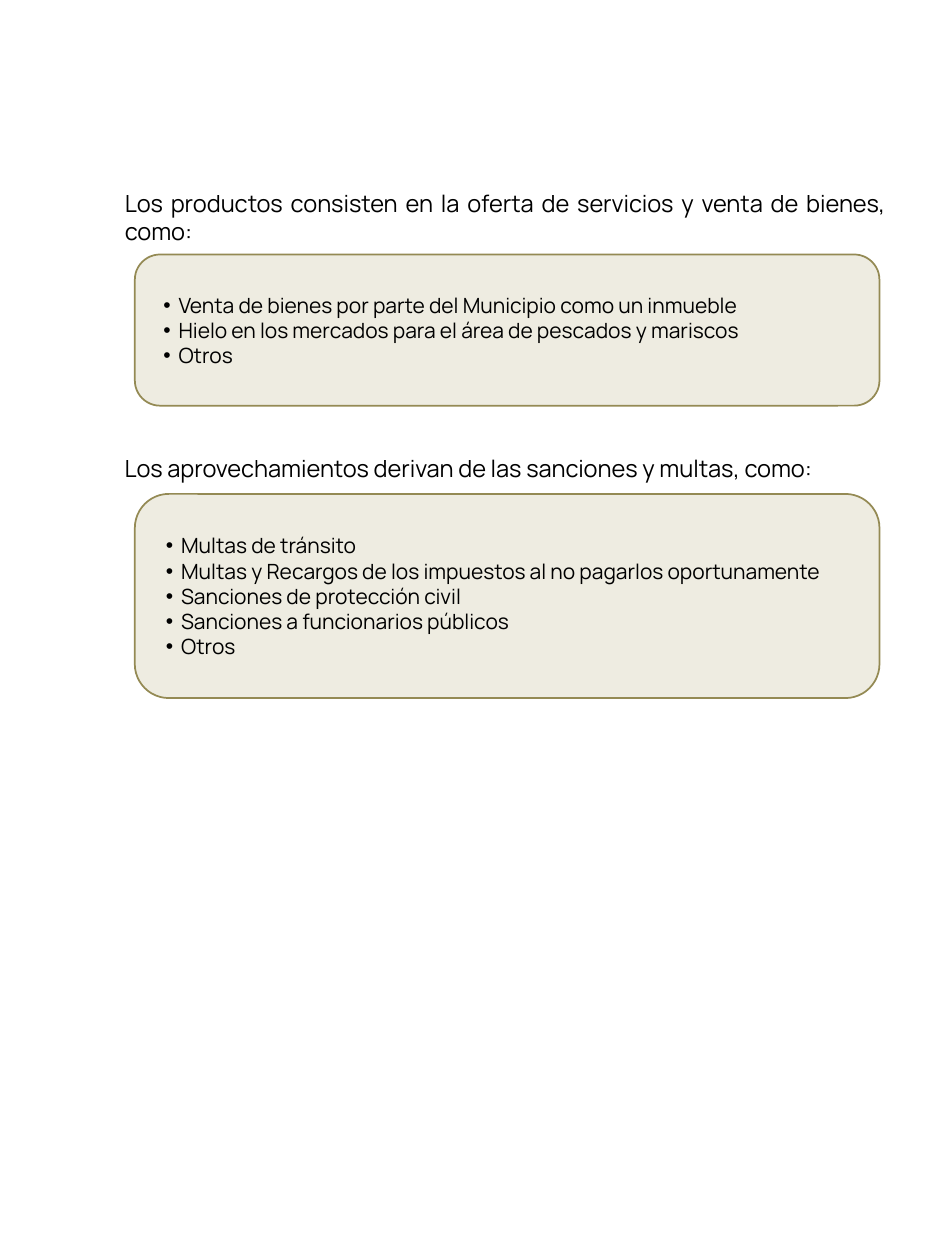
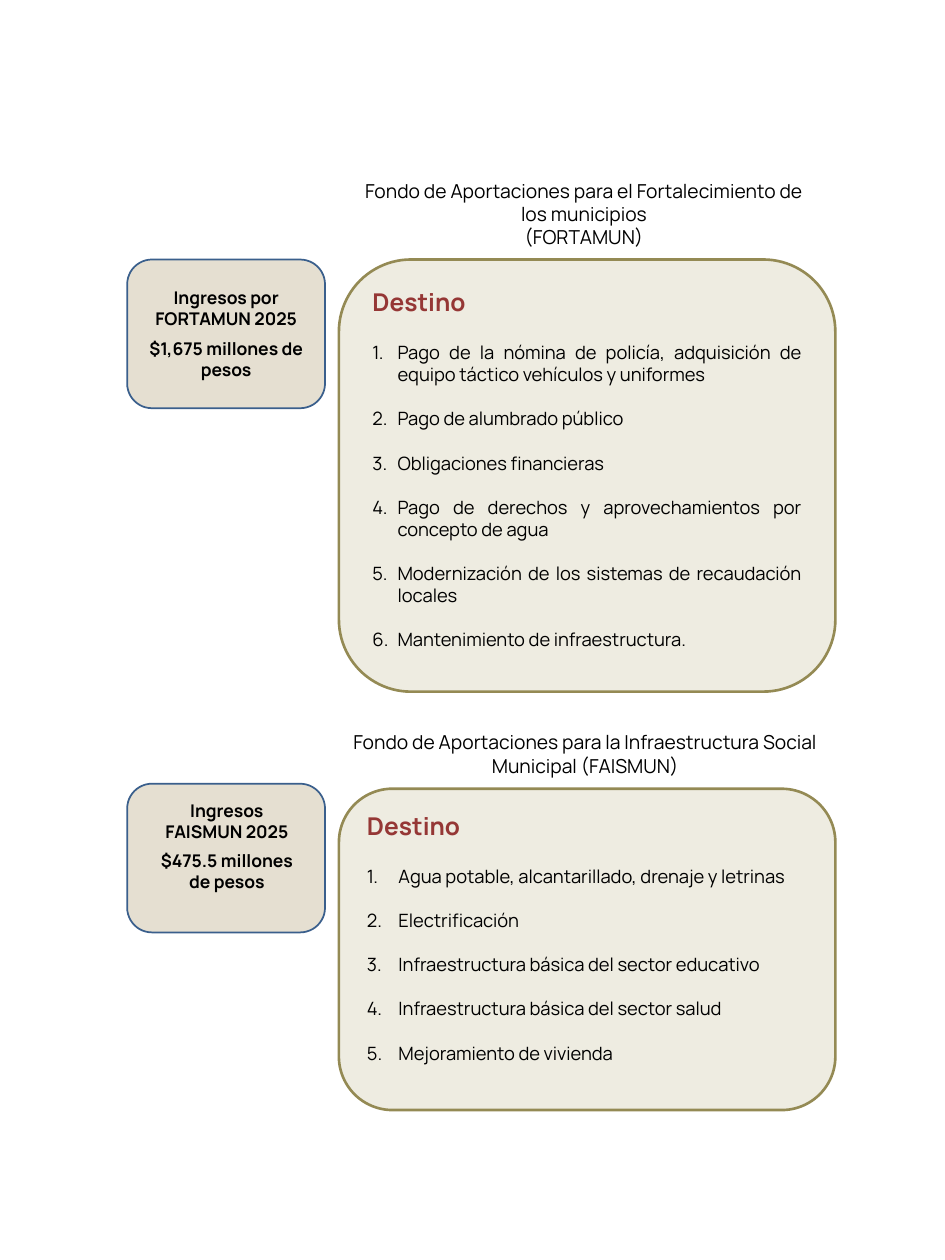
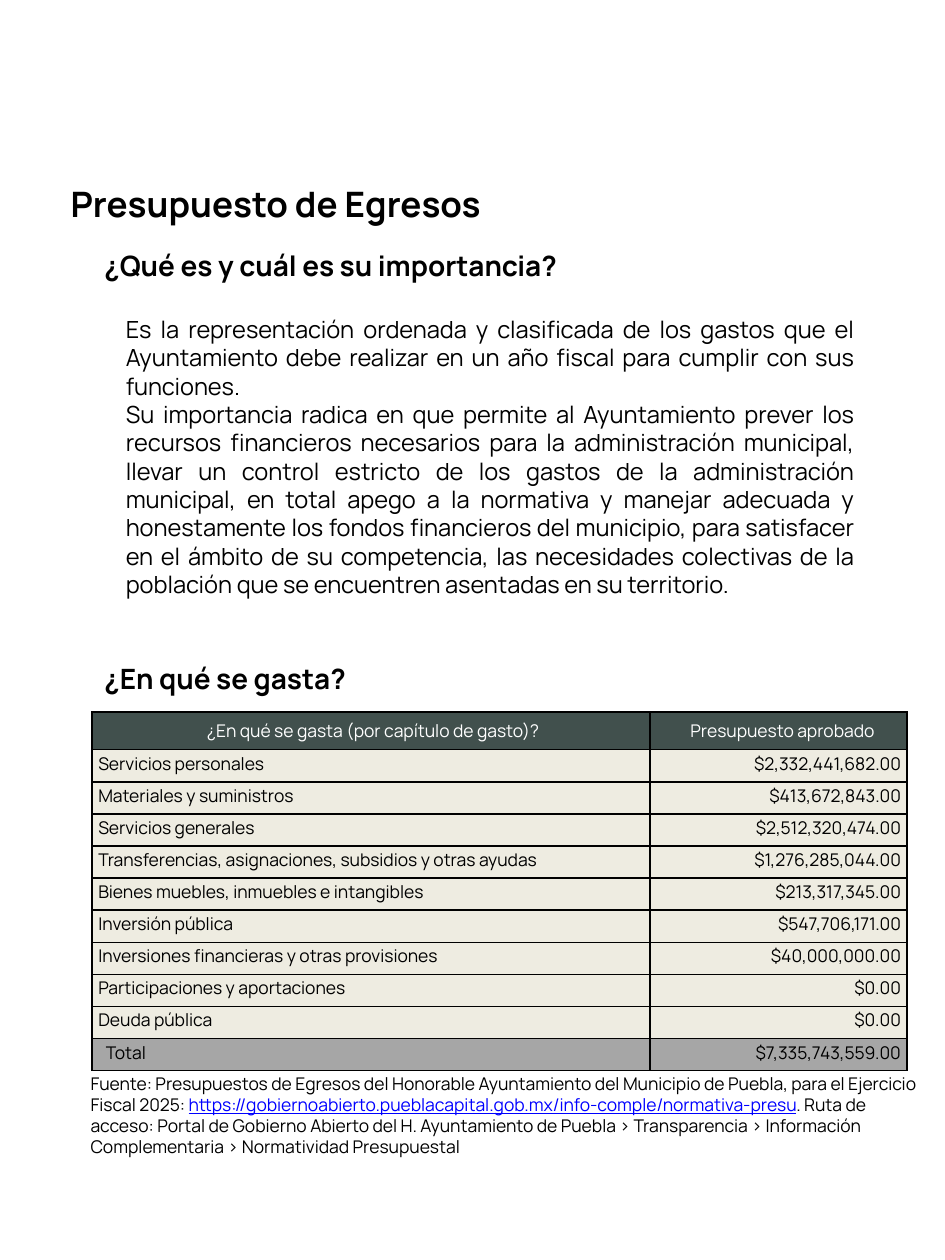
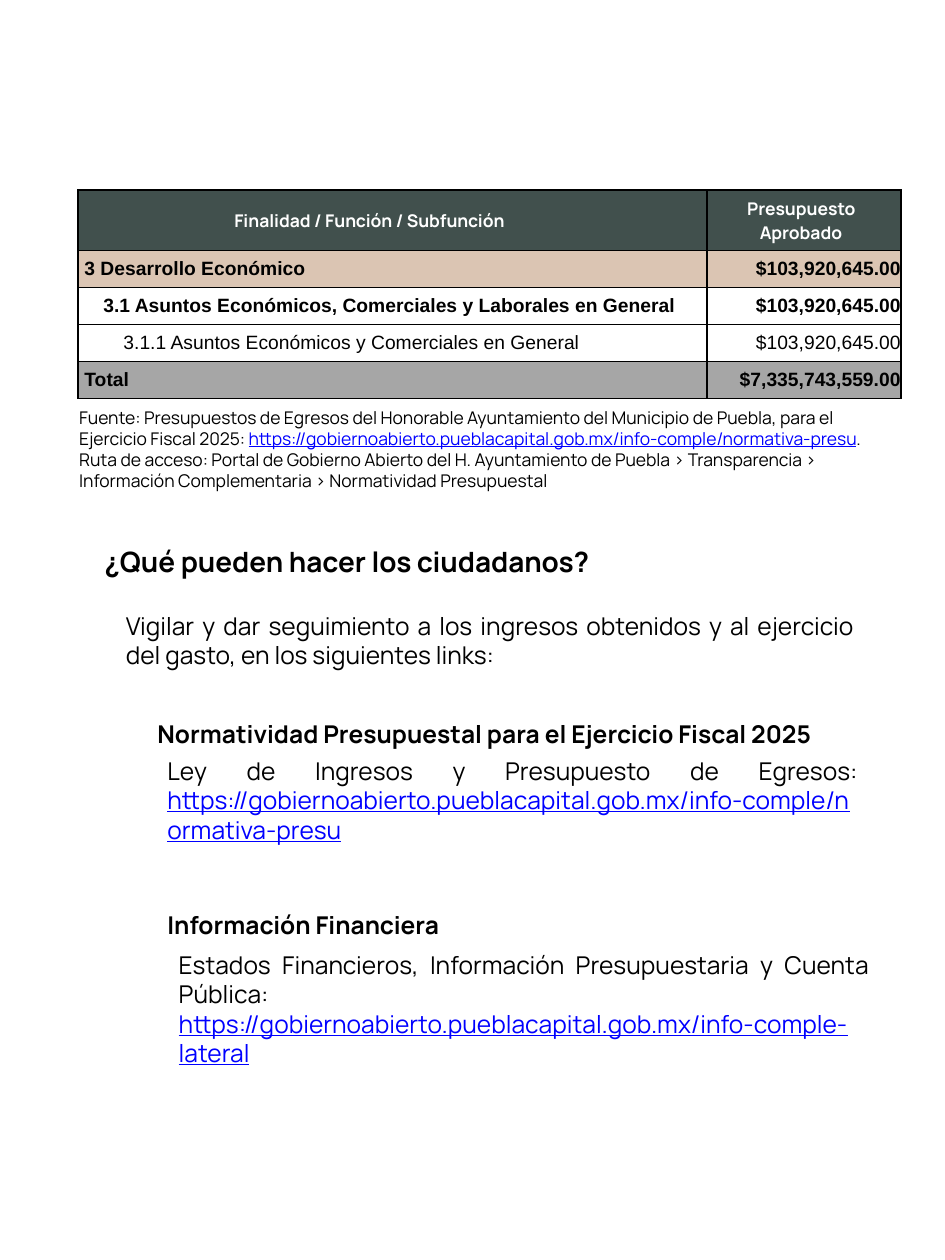
import dataclasses
import lxml.etree
import pptx
import pptx.dml.color
import pptx.enum.shapes
import pptx.enum.text
import pptx.oxml
import pptx.oxml.ns
import pptx.util


@dataclasses.dataclass(frozen=True)
class Theme:
    sans: str = "Manrope"
    table_sans: str = "Arial"
    ink: str = "000000"
    white: str = "FFFFFF"
    link: str = "0000FF"
    accent: str = "953735"
    panel: str = "EEECE1"
    panel_line: str = "948A54"
    income: str = "E5DFD1"
    income_line: str = "3A5F8C"
    header: str = "41504D"
    category: str = "DBC5B3"
    total: str = "A6A6A6"
    title: float = 20
    heading: float = 16
    subheading: float = 14
    body: float = 13.5
    bullet: float = 12
    fund: float = 11
    numbered: float = 10.5
    small: float = 10


theme = Theme()
rgb = pptx.dml.color.RGBColor.from_string
point = pptx.util.Pt
Align = pptx.enum.text.PP_ALIGN
Anchor = pptx.enum.text.MSO_ANCHOR
rounded = pptx.enum.shapes.MSO_SHAPE.ROUNDED_RECTANGLE

deck = pptx.Presentation()
deck.slide_width = pptx.util.Inches(7.5)
deck.slide_height = pptx.util.Inches(10)
column_unit = deck.slide_width / 75
row_unit = deck.slide_height / 100

layout = deck.slide_layouts.get_by_name("Title Only")
title_frame = layout.placeholders[0].text_frame
title_frame.vertical_anchor = Anchor.TOP
title_frame.auto_size = pptx.enum.text.MSO_AUTO_SIZE.NONE


def spot(column, row, columns, rows):
    return (round(column * column_unit), round(row * row_unit),
            round(columns * column_unit), round(rows * row_unit))


def write(frame, lines, size, color=theme.ink, bold=False, align=Align.LEFT,
          font=theme.sans, gap=0, spacing=None, indent=(0, 0), bullet=None):
    frame.word_wrap = True
    for line in lines:
        started = bool(frame.text)
        para = frame.add_paragraph() if started else frame.paragraphs[0]
        para.alignment = align
        if started and gap:
            para.space_before = point(gap)
        if spacing:
            para.line_spacing = point(spacing)
        properties = para._p.get_or_add_pPr()
        properties.set("marL", str(round(indent[0] * column_unit)))
        properties.set("indent", str(round(indent[1] * column_unit)))
        if bullet == "dot":
            mark = lxml.etree.SubElement(properties, pptx.oxml.ns.qn("a:buFont"))
            mark.set("typeface", theme.table_sans)
            mark = lxml.etree.SubElement(properties, pptx.oxml.ns.qn("a:buChar"))
            mark.set("char", "•")
        elif bullet == "number":
            mark = lxml.etree.SubElement(properties, pptx.oxml.ns.qn("a:buAutoNum"))
            mark.set("type", "arabicPeriod")
        for text, span_color in [(line, color)] if isinstance(line, str) else line:
            span = para.add_run()
            span.text = text
            span.font.name = font
            span.font.size = point(size)
            span.font.bold = bold
            span.font.underline = span_color == theme.link
            span.font.color.rgb = rgb(span_color)


income_page, funds_page, spending_page, citizens_page = [
    deck.slides.add_slide(layout) for _ in range(4)]

sections = [
    ("Los productos consisten en la oferta de servicios y venta de bienes, como:",
     (8.9, 14.5, 62.4, 5.7), (10.7, 20.2, 59.1, 12),
     ["Venta de bienes por parte del Municipio como un inmueble",
      "Hielo en los mercados para el área de pescados y mariscos",
      "Otros"]),
    ("Los aprovechamientos derivan de las sanciones y multas, como:",
     (8.9, 35.5, 66, 3.4), (10.7, 39.2, 59.1, 16.2),
     ["Multas de tránsito",
      "Multas y Recargos de los impuestos al no pagarlos oportunamente",
      "Sanciones de protección civil",
      "Sanciones a funcionarios públicos",
      "Otros"]),
]
for number, (lead, lead_spot, panel_spot, items) in enumerate(sections):
    panel = income_page.shapes.add_shape(rounded, *spot(*panel_spot))
    panel.shadow.inherit = False
    panel.fill.solid()
    panel.fill.fore_color.rgb = rgb(theme.panel)
    panel.line.color.rgb = rgb(theme.panel_line)
    panel.line.width = point(1)
    write(panel.text_frame, items, theme.bullet, indent=(1.9, -1.2), bullet="dot")
    box = income_page.shapes.add_textbox(0, 0, 0, 0) if number else income_page.shapes.title
    box.left, box.top, box.width, box.height = spot(*lead_spot)
    write(box.text_frame, [lead], theme.body, align=Align.JUSTIFY)

funds = [
    (["Fondo de Aportaciones para el Fortalecimiento de los municipios", "(FORTAMUN)"],
     (26.9, 13.7, 38.9, 6.6), (26.9, 20.6, 39.4, 34.3),
     (10.1, 20.6, 15.7, 11.8), (10.1, 22.3, 15.7, 8.4),
     ["Ingresos por FORTAMUN 2025", "$1,675 millones de pesos"],
     Align.JUSTIFY, 2,
     ["Pago de la nómina de policía, adquisición de equipo táctico vehículos y uniformes",
      "Pago de alumbrado público",
      "Obligaciones financieras",
      "Pago de derechos y aprovechamientos por concepto de agua",
      "Modernización de los sistemas de recaudación locales",
      "Mantenimiento de infraestructura."]),
    (["Fondo de Aportaciones para la Infraestructura Social Municipal (FAISMUN)"],
     (27, 57.5, 38.9, 4.7), (26.9, 62.6, 39.4, 25.5),
     (10.1, 62.2, 15.7, 11.8), (11.5, 63, 13, 10.1),
     ["Ingresos FAISMUN 2025", "$475.5 millones de pesos"],
     Align.LEFT, 2.5,
     ["Agua potable, alcantarillado, drenaje y letrinas",
      "Electrificación",
      "Infraestructura básica del sector educativo",
      "Infraestructura básica del sector salud",
      "Mejoramiento de vivienda"]),
]
for number, (name, name_spot, panel_spot, income_spot, amount_spot,
             amount, align, hang, uses) in enumerate(funds):
    group = funds_page.shapes.add_group_shape()
    income = group.shapes.add_shape(rounded, *spot(*income_spot))
    panel = funds_page.shapes.add_shape(rounded, *spot(*panel_spot))
    for shape, fill, line, width in [
            (income, theme.income, theme.income_line, 1),
            (panel, theme.panel, theme.panel_line, 1.5)]:
        shape.shadow.inherit = False
        shape.fill.solid()
        shape.fill.fore_color.rgb = rgb(fill)
        shape.line.color.rgb = rgb(line)
        shape.line.width = point(width)
    box = group.shapes.add_textbox(*spot(*amount_spot))
    write(box.text_frame, amount, theme.small, bold=True, align=Align.CENTER, gap=4.8)
    panel.text_frame.vertical_anchor = Anchor.TOP
    write(panel.text_frame, ["Destino"], theme.subheading, theme.accent, True, align)
    panel.text_frame.paragraphs[0].space_after = point(1.8)
    write(panel.text_frame, uses, theme.numbered, align=align, gap=12.6,
          indent=(hang, -hang), bullet="number")
    box = funds_page.shapes.add_textbox(0, 0, 0, 0) if number else funds_page.shapes.title
    box.left, box.top, box.width, box.height = spot(*name_spot)
    write(box.text_frame, name, theme.fund, align=Align.CENTER)

source = [[
    ("Fuente: Presupuestos de Egresos del Honorable Ayuntamiento del Municipio de Puebla, "
     "para el Ejercicio Fiscal 2025: ", theme.ink),
    ("https://gobiernoabierto.pueblacapital.gob.mx/info-comple/normativa-presu", theme.link),
    (". Ruta de acceso: Portal de Gobierno Abierto del H. Ayuntamiento de Puebla > "
     "Transparencia > Información Complementaria > Normatividad Presupuestal", theme.ink),
]]
for page, title, title_spot, size in [
        (spending_page, "Presupuesto de Egresos", (4.6, 14, 61.5, 4.4), theme.title),
        (citizens_page, "¿Qué pueden hacer los ciudadanos?", (7.3, 42.7, 61.5, 3.7),
         theme.heading)]:
    box = page.shapes.title
    box.left, box.top, box.width, box.height = spot(*title_spot)
    write(box.text_frame, [title], size, bold=True)

passages = [
    (spending_page, (7.3, 19.2, 61.5, 3.7), theme.heading, True, Align.LEFT,
     ["¿Qué es y cuál es su importancia?"]),
    (spending_page, (9, 24.5, 59.8, 26), theme.body, False, Align.JUSTIFY,
     ["Es la representación ordenada y clasificada de los gastos que el Ayuntamiento debe "
      "realizar en un año fiscal para cumplir con sus funciones.",
      "Su importancia radica en que permite al Ayuntamiento prever los recursos financieros "
      "necesarios para la administración municipal, llevar un control estricto de los gastos "
      "de la administración municipal, en total apego a la normativa y manejar adecuada y "
      "honestamente los fondos financieros del municipio, para satisfacer en el ámbito de su "
      "competencia, las necesidades colectivas de la población que se encuentren asentadas "
      "en su territorio."]),
    (spending_page, (7.3, 52, 61.5, 3.7), theme.heading, True, Align.LEFT,
     ["¿En qué se gasta?"]),
    (spending_page, (6.2, 84.7, 68.8, 7.7), theme.small, False, Align.LEFT, source),
    (citizens_page, (5.3, 31.8, 66.2, 7.7), theme.small, False, Align.LEFT, source),
    (citizens_page, (9, 48, 59.8, 5.7), theme.subheading, False, Align.JUSTIFY,
     ["Vigilar y dar seguimiento a los ingresos obtenidos y al ejercicio del gasto, "
      "en los siguientes links:"]),
    (citizens_page, (11.5, 56.6, 61.5, 3.4), theme.subheading, True, Align.LEFT,
     ["Normatividad Presupuestal para el Ejercicio Fiscal 2025"]),
    (citizens_page, (12.3, 59.5, 56.8, 8.1), theme.subheading, False, Align.JUSTIFY,
     [[("Ley de Ingresos y Presupuesto de Egresos: ", theme.ink),
       ("https://gobiernoabierto.pueblacapital.gob.mx/info-comple/normativa-presu",
        theme.link)]]),
    (citizens_page, (12.3, 71.7, 61.5, 3.4), theme.subheading, True, Align.LEFT,
     ["Información Financiera"]),
    (citizens_page, (13.2, 74.9, 56.8, 10.4), theme.subheading, False, Align.JUSTIFY,
     ["Estados Financieros, Información Presupuestaria y Cuenta Pública:",
      [("https://gobiernoabierto.pueblacapital.gob.mx/info-comple-lateral", theme.link)]]),
]
for page, place, size, bold, align, lines in passages:
    box = page.shapes.add_textbox(*spot(*place))
    write(box.text_frame, lines, size, bold=bold, align=align)

chapters = [
    ("Servicios personales", "$2,332,441,682.00"),
    ("Materiales y suministros", "$413,672,843.00"),
    ("Servicios generales", "$2,512,320,474.00"),
    ("Transferencias, asignaciones, subsidios y otras ayudas", "$1,276,285,044.00"),
    ("Bienes muebles, inmuebles e intangibles", "$213,317,345.00"),
    ("Inversión pública", "$547,706,171.00"),
    ("Inversiones financieras y otras provisiones", "$40,000,000.00"),
    ("Participaciones y aportaciones", "$0.00"),
    ("Deuda pública", "$0.00"),
]
total = "$7,335,743,559.00"
tables = [
    (spending_page, (7.3, 56.5), (44.3, 20.4), (3, 2.53), 0.5,
     theme.small, theme.sans, 11.1, False,
     [("¿En qué se gasta (por capítulo de gasto)?", Align.CENTER, (0.3, 0)),
      ("Presupuesto aprobado", Align.LEFT, (2.7, 0))],
     [(label, amount, theme.panel, (0, 0), False) for label, amount in chapters]
     + [("Total", total, theme.total, (0.6, 0), False)]),
    (citizens_page, (6.2, 15.1), (49.9, 15.4), (4.8, 2.93), 0,
     theme.fund, theme.table_sans, 12.3, True,
     [("Finalidad / Función / Subfunción", Align.LEFT, (11.9, 0)),
      ("Presupuesto Aprobado", Align.LEFT, (3.7, -1))],
     [("3 Desarrollo Económico", "$103,920,645.00", theme.category, (0.5, 0), True),
      ("3.1 Asuntos Económicos, Comerciales y Laborales en General",
       "$103,920,645.00", None, (0.5, 1.5), True),
      ("3.1.1 Asuntos Económicos y Comerciales en General",
       "$103,920,645.00", None, (3.6, 0), False),
      ("Total", total, theme.total, (0.5, 0), True)]),
]
for (page, corner, columns, (header_height, row_height), inset,
     size, font, spacing, header_bold, headers, records) in tables:
    height = header_height + row_height * len(records)
    place = spot(*corner, sum(columns), height)
    table = page.shapes.add_table(len(records) + 1, 2, *place).table
    table.horz_banding = False
    for column, width in zip(table.columns, columns):
        column.width = round(width * column_unit)
    for index, row in enumerate(table.rows):
        row.height = round((row_height if index else header_height) * row_unit)
        for side, cell in enumerate(row.cells):
            cell.vertical_anchor = Anchor.MIDDLE
            margin = round((inset if index else 0.5) * column_unit)
            cell.margin_left = cell.margin_right = margin
            cell.margin_top = cell.margin_bottom = margin
            if index == 0:
                fill = theme.header
                text, align, indent = headers[side]
                write(cell.text_frame, [text], theme.small, theme.white, header_bold,
                      align, indent=indent)
            else:
                label, amount, fill, indent, bold = records[index - 1]
                write(cell.text_frame, [amount if side else label], size, bold=bold,
                      align=Align.RIGHT if side else Align.LEFT, font=font,
                      spacing=spacing, indent=(0, 0) if side else indent)
            if fill:
                cell.fill.solid()
                cell.fill.fore_color.rgb = rgb(fill)
            else:
                cell.fill.background()
            properties = cell._tc.get_or_add_tcPr()
            for position, edge in enumerate(("lnL", "lnR", "lnT", "lnB")):
                properties.insert(position, pptx.oxml.parse_xml(
                    f'<a:{edge} {pptx.oxml.ns.nsdecls("a")} w="12700"><a:solidFill>'
                    f'<a:srgbClr val="{theme.ink}"/></a:solidFill></a:{edge}>'))

deck.save("out.pptx")
